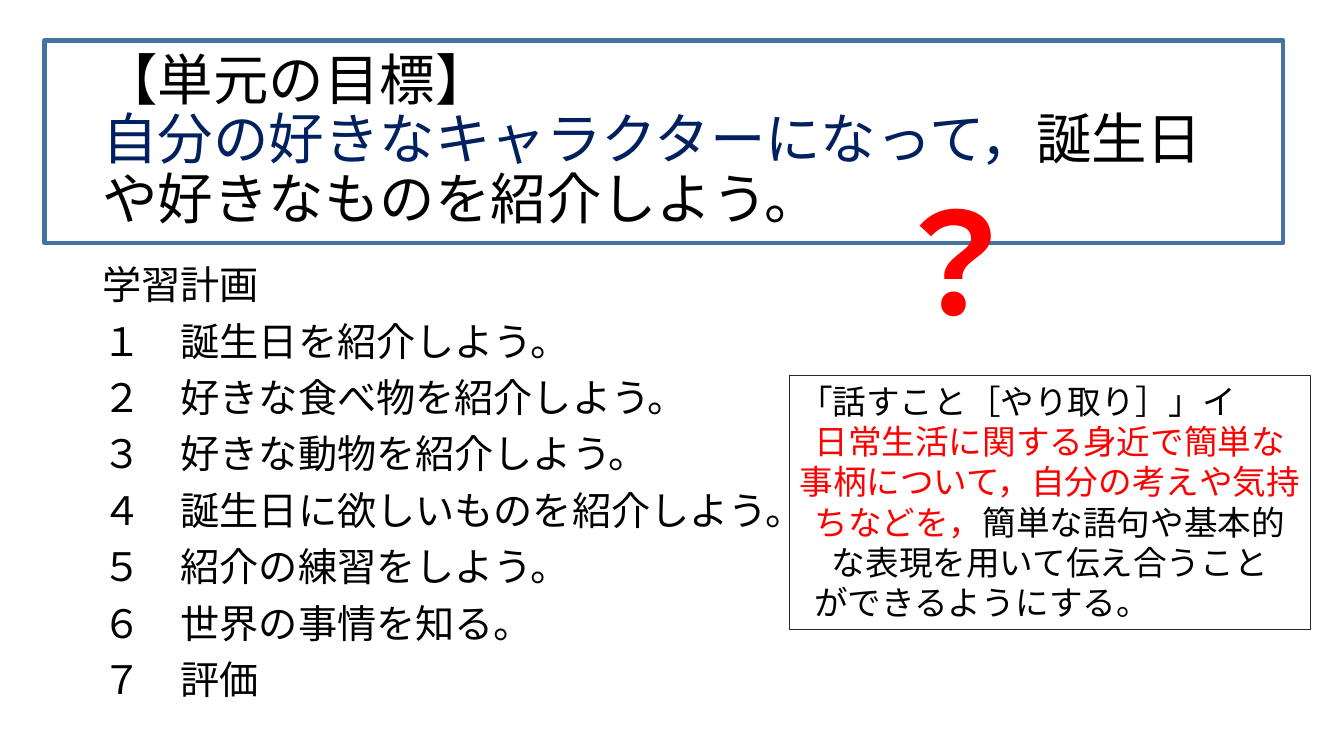
from dataclasses import dataclass

from lxml import etree
from pptx import Presentation
from pptx.dml.color import RGBColor
from pptx.enum.lang import MSO_LANGUAGE_ID
from pptx.enum.shapes import MSO_SHAPE
from pptx.enum.text import MSO_ANCHOR, MSO_AUTO_SIZE, PP_ALIGN
from pptx.oxml.ns import qn
from pptx.util import Cm, Pt

RECTANGLE = MSO_SHAPE.RECTANGLE
TOP, MIDDLE = MSO_ANCHOR.TOP, MSO_ANCHOR.MIDDLE
LEFT, CENTER = PP_ALIGN.LEFT, PP_ALIGN.CENTER
NO_FIT, GROW = MSO_AUTO_SIZE.NONE, MSO_AUTO_SIZE.SHAPE_TO_FIT_TEXT
JAPANESE = MSO_LANGUAGE_ID.JAPANESE
TITLE_ONLY = 5


@dataclass(frozen=True)
class Theme:
    font: str = "Noto Sans CJK JP"
    text: RGBColor = RGBColor(0x00, 0x00, 0x00)
    navy: RGBColor = RGBColor(0x00, 0x20, 0x60)
    red: RGBColor = RGBColor(0xFF, 0x00, 0x00)
    goal_frame: RGBColor = RGBColor(0x43, 0x73, 0x9E)
    note_frame: RGBColor = RGBColor(0x26, 0x26, 0x26)
    title_size: float = 39.6
    plan_size: float = 28
    note_size: float = 24
    question_size: float = 100


THEME = Theme()

PLAN_STEPS = [
    "誕生日を紹介しよう。",
    "好きな食べ物を紹介しよう。",
    "好きな動物を紹介しよう。",
    "誕生日に欲しいものを紹介しよう。",
    "紹介の練習をしよう。",
    "世界の事情を知る。",
    "評価",
]
FULL_WIDTH_DIGITS = "１２３４５６７"


def add_run(paragraph, text, size, color=THEME.text, bold=False):
    run = paragraph.add_run()
    run.text = text
    font = run.font
    font.name = THEME.font
    font.size = Pt(size)
    font.bold = bold
    font.color.rgb = color
    font.language_id = JAPANESE
    latin = run._r.rPr.find(qn("a:latin"))
    east_asian = etree.Element(qn("a:ea"), typeface=THEME.font)
    latin.addnext(east_asian)


def prepare_frame(shape, anchor=TOP, auto_size=NO_FIT):
    frame = shape.text_frame
    frame.word_wrap = True
    frame.auto_size = auto_size
    frame.vertical_anchor = anchor
    return frame


def add_frame(slide, box, color, width):
    """Add an unfilled rectangle with a coloured outline."""
    shape = slide.shapes.add_shape(RECTANGLE, *box)
    shape.shadow.inherit = False
    shape.fill.background()
    shape.line.color.rgb = color
    shape.line.width = Pt(width)
    return shape


def add_goal(slide, left, top, width, height):
    margin = Cm(1.21)
    title = slide.shapes.title
    title.left, title.top = left + margin, top
    title.width, title.height = Cm(29.21), height
    paragraph = prepare_frame(title, MIDDLE).paragraphs[0]
    paragraph.alignment = LEFT
    paragraph.line_spacing = 0.9
    add_run(paragraph, "【単元の目標】", THEME.title_size)
    paragraph.add_line_break()
    add_run(paragraph, "自分の好きなキャラクターになって，", THEME.title_size, THEME.navy)
    add_run(paragraph, "誕生日や好きなものを紹介しよう。", THEME.title_size)
    add_frame(slide, (left, top, width, height), THEME.goal_frame, 3)


def add_plan(slide, left, top, width, height):
    frame = prepare_frame(slide.shapes.add_textbox(left, top, width, height))
    numbered = [f"{digit}　{step}" for digit, step in zip(FULL_WIDTH_DIGITS, PLAN_STEPS)]
    for index, line in enumerate(["学習計画"] + numbered):
        paragraph = frame.add_paragraph() if index else frame.paragraphs[0]
        paragraph.line_spacing = 0.9
        paragraph.space_before = Pt(10)
        add_run(paragraph, line, THEME.plan_size)


def add_question_mark(slide, left, top, width, height):
    textbox = slide.shapes.add_textbox(left, top, width, height)
    paragraph = prepare_frame(textbox, auto_size=GROW).paragraphs[0]
    paragraph.alignment = CENTER
    add_run(paragraph, "？", THEME.question_size, THEME.red, bold=True)


def add_standard_note(slide, left, top, width, height):
    shape = add_frame(slide, (left, top, width, height), THEME.note_frame, 0.75)
    frame = prepare_frame(shape, auto_size=GROW)
    heading = frame.paragraphs[0]
    heading.alignment = LEFT
    add_run(heading, "「話すこと［やり取り］」イ", THEME.note_size)

    statement = frame.add_paragraph()
    statement.alignment = CENTER
    add_run(statement, "日常生活に関する身近で簡単な事柄について，自分の考えや気持ちなどを，",
            THEME.note_size, THEME.red)
    add_run(statement, "簡単な語句や基本的な表現を用いて伝え合うこと", THEME.note_size)

    ending = frame.add_paragraph()
    ending.alignment = LEFT
    ending._p.get_or_add_pPr().set("marL", str(Cm(0.38)))
    add_run(ending, "ができるようにする。", THEME.note_size)


def main():
    presentation = Presentation()
    presentation.slide_width = Cm(33.87)
    presentation.slide_height = Cm(19.05)
    slide = presentation.slides.add_slide(presentation.slide_layouts[TITLE_ONLY])
    add_goal(slide, Cm(1.12), Cm(1.02), Cm(31.22), Cm(5.11))
    add_plan(slide, Cm(2.33), Cm(6.58), Cm(29.21), Cm(12.17))
    add_question_mark(slide, Cm(20.9), Cm(4.29), Cm(6.35), Cm(4.52))
    add_standard_note(slide, Cm(19.89), Cm(9.47), Cm(13.13), Cm(6.4))
    presentation.save("out.pptx")


if __name__ == "__main__":
    main()
